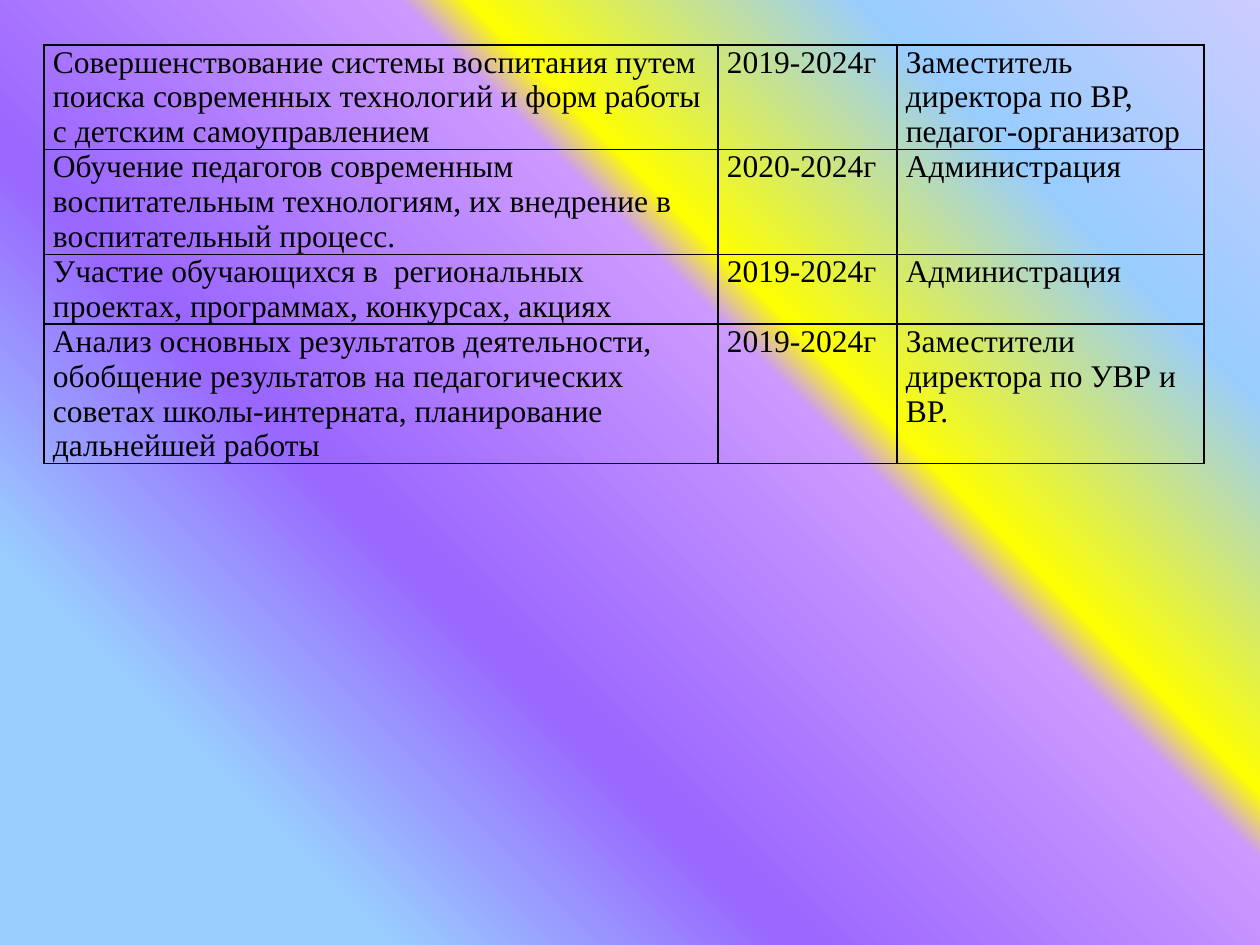
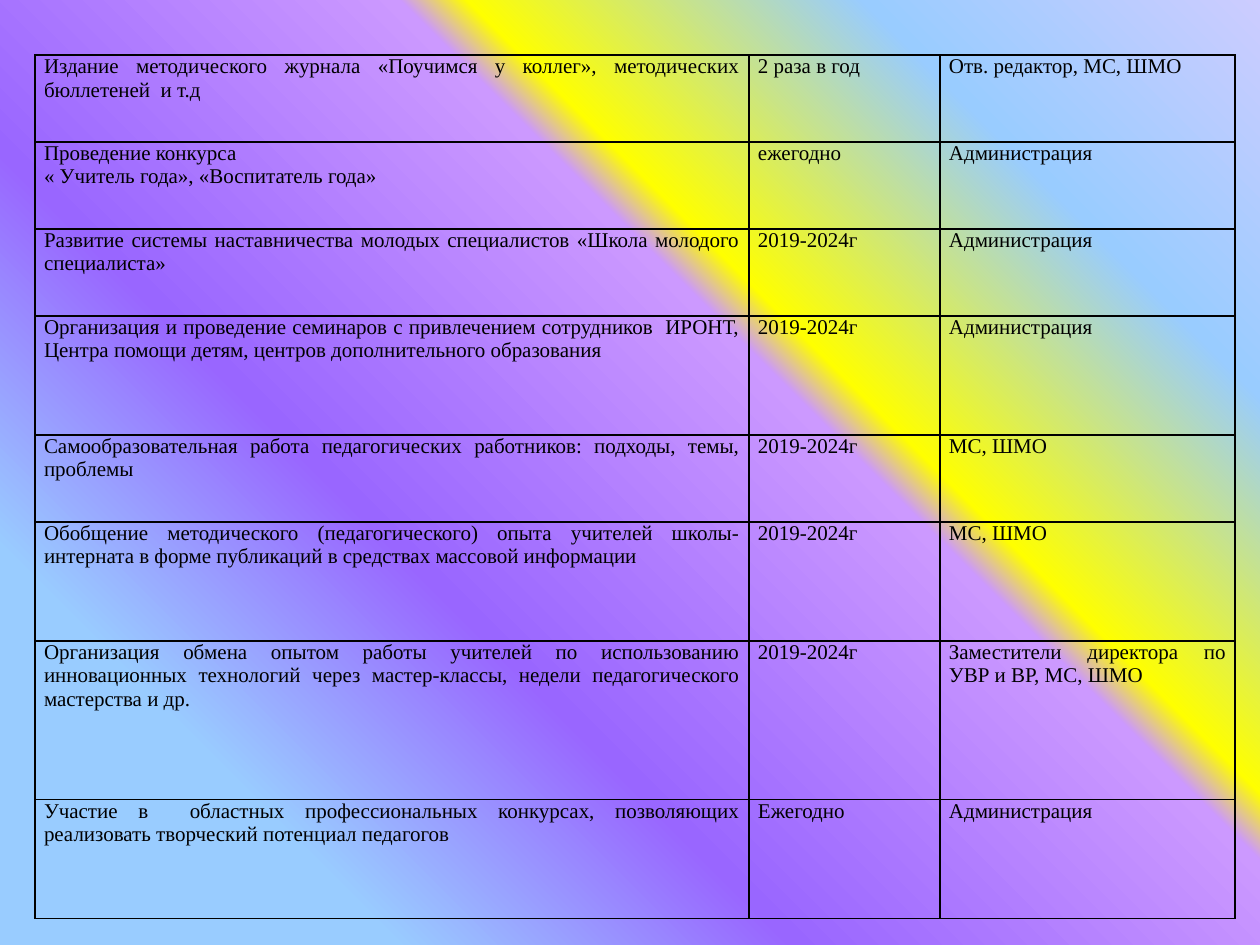
from dataclasses import dataclass

from lxml import etree
from pptx import Presentation
from pptx.dml.color import RGBColor
from pptx.enum.text import PP_ALIGN
from pptx.oxml.ns import qn
from pptx.util import Emu, Pt

LEFT, JUSTIFY = PP_ALIGN.LEFT, PP_ALIGN.JUSTIFY
BLANK_LAYOUT = 6
PX_PER_INCH = 126


@dataclass(frozen=True)
class Theme:
    font: str = "Times New Roman"
    ink: str = "000000"
    large: int = 18
    small: int = 12
    border: int = 1
    inset: int = 9
    gradient: tuple = (
        (18, "99CCFF"), (36, "9966FF"), (61, "CC99FF"),
        (64, "FFFF00"), (82, "99CCFF"), (100, "CCCCFF"),
    )
    gradient_angle: int = 45


THEME = Theme()
PERIOD = "2019-2024г"
ADMIN = "Администрация"
COUNCILS = "МС, ШМО"

UPBRINGING_PLAN = [
    ("Совершенствование системы воспитания путем поиска современных "
     "технологий и форм работы с детским самоуправлением",
     PERIOD, "Заместитель директора по ВР, педагог-организатор"),
    ("Обучение педагогов современным воспитательным технологиям, "
     "их внедрение в воспитательный процесс.",
     "2020-2024г", ADMIN),
    ("Участие обучающихся в  региональных проектах, программах, "
     "конкурсах, акциях",
     PERIOD, ADMIN),
    ("Анализ основных результатов деятельности, обобщение результатов на "
     "педагогических советах школы-интерната, планирование дальнейшей работы",
     PERIOD, "Заместители директора по УВР и ВР."),
]

TEACHER_PLAN = [
    ("Издание методического журнала «Поучимся у коллег», "
     "методических бюллетеней  и т.д",
     "2 раза в год", "Отв. редактор, МС, ШМО"),
    ("Проведение конкурса\n« Учитель года», «Воспитатель года»",
     "ежегодно", ADMIN),
    ("Развитие системы наставничества молодых специалистов "
     "«Школа молодого специалиста»",
     PERIOD, ADMIN),
    ("Организация и проведение семинаров с привлечением сотрудников  ИРОНТ, "
     "Центра помощи детям, центров дополнительного образования",
     PERIOD, ADMIN),
    ("Самообразовательная работа педагогических работников: "
     "подходы, темы, проблемы",
     PERIOD, COUNCILS),
    ("Обобщение методического (педагогического) опыта учителей "
     "школы-интерната в форме публикаций в средствах массовой информации",
     PERIOD, COUNCILS),
    ("Организация обмена опытом работы учителей по использованию "
     "инновационных технологий через мастер-классы, недели "
     "педагогического мастерства и др.",
     PERIOD, "Заместители директора по УВР и ВР, МС, ШМО"),
    ("Участие в  областных профессиональных конкурсах, позволяющих "
     "реализовать творческий потенциал педагогов",
     "Ежегодно", ADMIN),
]


def px(n):
    return Emu(round(n * 914400 / PX_PER_INCH))


def set_background(master):
    """Give every slide the diagonal gradient through the master."""
    fill = master.background.fill
    fill.gradient()
    fill.gradient_angle = THEME.gradient_angle
    stops = master.element.xpath(".//p:bg//a:gsLst")[0]
    for stop in list(stops):
        stops.remove(stop)
    for percent, color in THEME.gradient:
        stop = etree.SubElement(stops, qn("a:gs"), pos=str(percent * 1000))
        etree.SubElement(stop, qn("a:srgbClr"), val=color)


def set_borders(cell):
    """Line all four sides; the lines must precede the cell's fill."""
    tc_pr = cell._tc.get_or_add_tcPr()
    for i, side in enumerate(("a:lnL", "a:lnR", "a:lnT", "a:lnB")):
        line = etree.Element(qn(side), w=str(Pt(THEME.border)))
        solid = etree.SubElement(line, qn("a:solidFill"))
        etree.SubElement(solid, qn("a:srgbClr"), val=THEME.ink)
        tc_pr.insert(i, line)


def fill_cell(cell, text, size, align):
    cell.fill.background()
    cell.margin_left = cell.margin_right = px(THEME.inset)
    cell.margin_top = cell.margin_bottom = 0
    set_borders(cell)
    cell.text_frame.text = text
    for p in cell.text_frame.paragraphs:
        p.alignment = align
        for r in p.runs:
            r.font.name = THEME.font
            r.font.size = Pt(size)
            r.font.color.rgb = RGBColor.from_string(THEME.ink)


def add_plan_slide(prs, plan, left, top, widths, heights, size, align):
    """Add a slide with one table of tasks, dates and people in charge."""
    slide = prs.slides.add_slide(prs.slide_layouts[BLANK_LAYOUT])
    frame = slide.shapes.add_table(len(plan), len(widths), px(left), px(top),
                                   px(sum(widths)), px(sum(heights)))
    table = frame.table
    table.first_row = table.horz_banding = False
    for column, width in zip(table.columns, widths):
        column.width = px(width)
    for row, height, texts in zip(table.rows, heights, plan):
        row.height = px(height)
        for cell, text in zip(row.cells, texts):
            fill_cell(cell, text, size, align)


def main():
    prs = Presentation()
    prs.slide_width, prs.slide_height = px(1260), px(945)
    set_background(prs.slide_master)
    add_plan_slide(prs, UPBRINGING_PLAN, 44, 45, (674, 179, 307),
                   [52] * len(UPBRINGING_PLAN), THEME.large, LEFT)
    add_plan_slide(prs, TEACHER_PLAN, 35, 55, (714, 191, 295),
                   (87, 87, 87, 119, 87, 119, 159, 119), THEME.small, JUSTIFY)
    prs.save("out.pptx")


if __name__ == "__main__":
    main()
